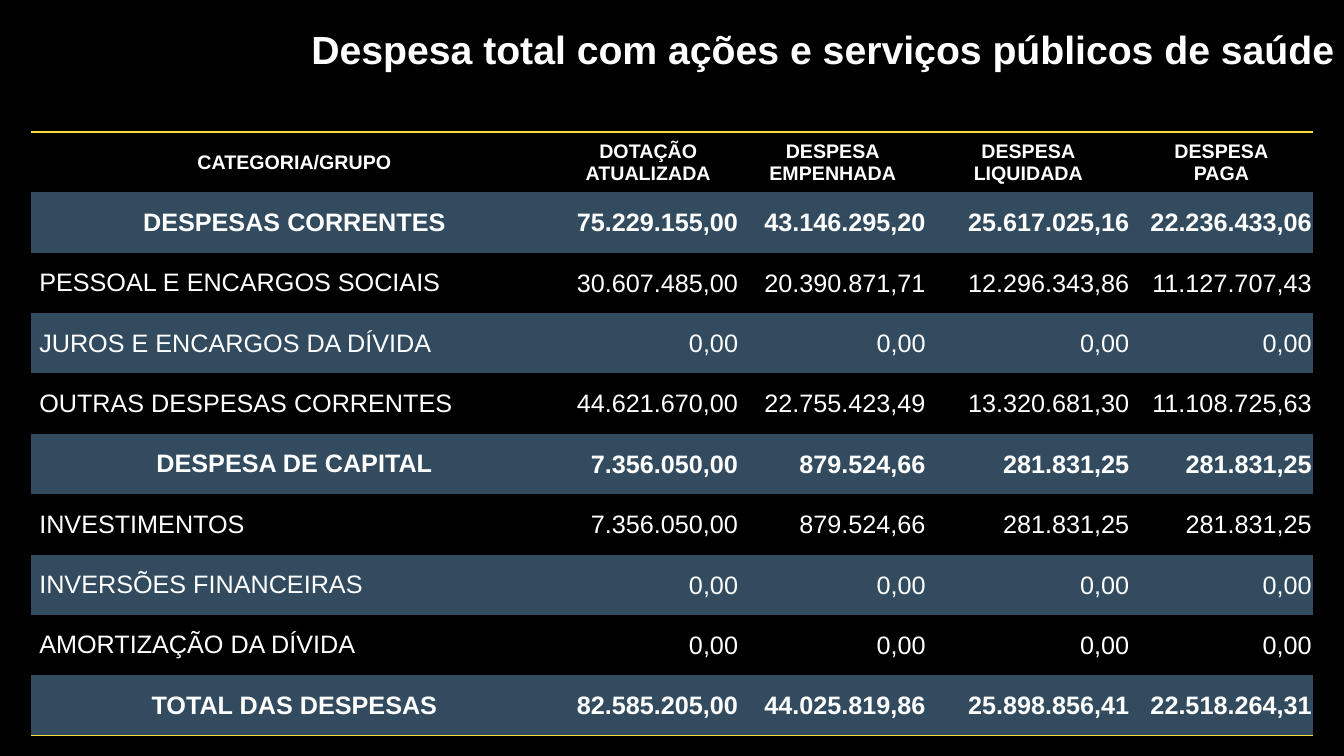
from lxml import etree
from pptx import Presentation
from pptx import util as u
from pptx.dml.color import RGBColor
from pptx.enum import text
from pptx.oxml import ns

COLORS = {"background": "000000", "text": "FFFFFF", "band": "324B5F", "rule": "F4DE3A"}
NO_STYLE = "{2D5ABB26-0587-4C30-8999-92F81FD0307C}"
LEFT, CENTER, RIGHT = text.PP_ALIGN.LEFT, text.PP_ALIGN.CENTER, text.PP_ALIGN.RIGHT

COLUMNS = [5.22, 1.8, 1.86, 2.02, 1.81]
HEADER = ["CATEGORIA/GRUPO", "DOTAÇÃO\nATUALIZADA", "DESPESA\nEMPENHADA",
          "DESPESA\nLIQUIDADA", "DESPESA\nPAGA"]
ZEROS = ["0,00"] * 4
# Each row: is it a total, then its cells
ROWS = [
    (True, ["DESPESAS CORRENTES", "75.229.155,00", "43.146.295,20", "25.617.025,16", "22.236.433,06"]),
    (False, ["PESSOAL E ENCARGOS SOCIAIS", "30.607.485,00", "20.390.871,71", "12.296.343,86", "11.127.707,43"]),
    (False, ["JUROS E ENCARGOS DA DÍVIDA", *ZEROS]),
    (False, ["OUTRAS DESPESAS CORRENTES", "44.621.670,00", "22.755.423,49", "13.320.681,30", "11.108.725,63"]),
    (True, ["DESPESA DE CAPITAL", "7.356.050,00", "879.524,66", "281.831,25", "281.831,25"]),
    (False, ["INVESTIMENTOS", "7.356.050,00", "879.524,66", "281.831,25", "281.831,25"]),
    (False, ["INVERSÕES FINANCEIRAS", *ZEROS]),
    (False, ["AMORTIZAÇÃO DA DÍVIDA", *ZEROS]),
    (True, ["TOTAL DAS DESPESAS", "82.585.205,00", "44.025.819,86", "25.898.856,41", "22.518.264,31"]),
]


def rgb(name):
    return RGBColor.from_string(COLORS[name])


class ExpenseSlide:
    font = "Arial"

    def __init__(self, prs):
        self.s = prs.slides.add_slide(prs.slide_layouts[6])
        fill = self.s.background.fill
        fill.solid()
        fill.fore_color.rgb = rgb("background")

    def set_text(self, tf, content, size, bold, align):
        tf.text = content
        for p in tf.paragraphs:
            p.alignment = align
            p.font.name, p.font.size, p.font.bold = self.font, u.Pt(size), bold
            p.font.color.rgb = rgb("text")

    def title(self, content, left, top, width, height):
        sp = self.s.shapes.add_textbox(*map(u.Inches, (left, top, width, height)))
        tf = sp.text_frame
        tf.word_wrap = True
        tf.auto_size = text.MSO_AUTO_SIZE.SHAPE_TO_FIT_TEXT
        self.set_text(tf, content, 28, True, RIGHT)

    def cell(self, cell, content, size, bold, align, margins, banded):
        cell.margin_left, cell.margin_top, cell.margin_right = map(u.Inches, margins)
        cell.margin_bottom = 0
        cell.vertical_anchor = text.MSO_ANCHOR.MIDDLE
        self.set_text(cell.text_frame, content, size, bold, align)
        if banded:
            cell.fill.solid()
            cell.fill.fore_color.rgb = rgb("band")
        else:
            cell.fill.background()

    def rule(self, tc, side):
        ln = etree.Element(ns.qn(f"a:{side}"), w=str(u.Pt(1)))
        fill = etree.SubElement(ln, ns.qn("a:solidFill"))
        etree.SubElement(fill, ns.qn("a:srgbClr"), val=COLORS["rule"])
        tc.find(ns.qn("a:tcPr")).insert(0, ln)

    def table(self, left, top, width, height):
        frame = self.s.shapes.add_table(len(ROWS) + 1, len(COLUMNS),
                                        *map(u.Inches, (left, top, width, height)))
        table = frame.table
        table.first_row = table.horz_banding = False
        next(frame.element.iter(ns.qn("a:tableStyleId"))).text = NO_STYLE
        for column, inches in zip(table.columns, COLUMNS):
            column.width = u.Inches(inches)

        # Header
        for c, content in enumerate(HEADER):
            self.cell(table.cell(0, c), content, 14, True, CENTER, (0, 0, 0), False)

        # Expense rows, every other one banded
        for r, (total, values) in enumerate(ROWS, 1):
            for c, content in enumerate(values):
                if c:
                    align, margins = RIGHT, (0.01, 0.01, 0.01)
                elif total:
                    align, margins = CENTER, (0, 0, 0)
                else:
                    align, margins = LEFT, (0.08, 0, 0)
                self.cell(table.cell(r, c), content, 18, total, align, margins, r % 2 == 1)

        # Rules above and below
        rows = list(frame.element.iter(ns.qn("a:tr")))
        for row, side in ((rows[0], "lnT"), (rows[-1], "lnB")):
            for tc in row.iter(ns.qn("a:tc")):
                self.rule(tc, side)


def main():
    prs = Presentation()
    prs.slide_width, prs.slide_height = u.Inches(13.33), u.Inches(7.5)
    slide = ExpenseSlide(prs)
    slide.table(0.31, 1.31, 12.72, 5.99)
    slide.title("Despesa total com ações e serviços públicos de saúde", 2.79, 0.2, 10.54, 0.57)
    prs.save("out.pptx")


if __name__ == "__main__":
    main()
